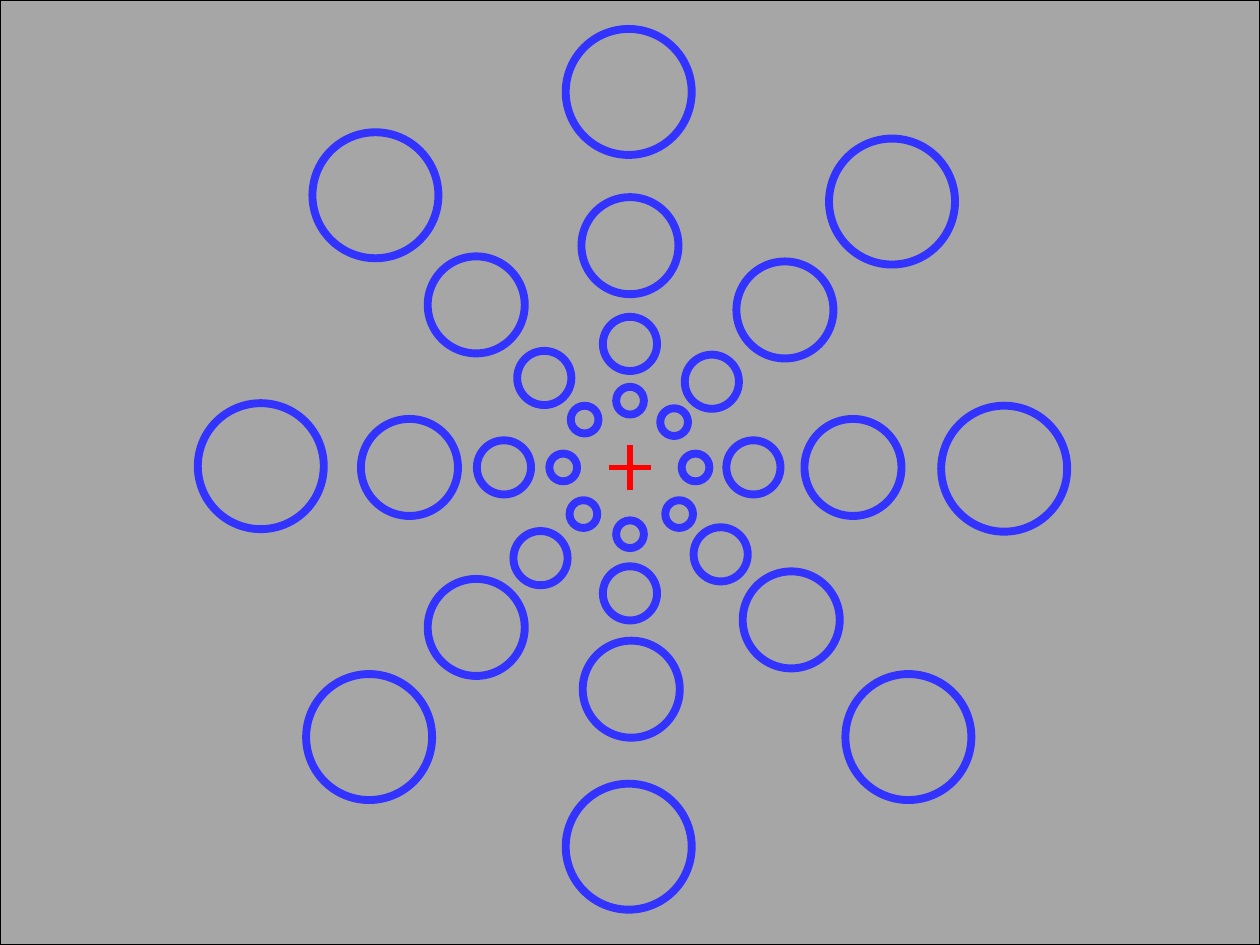
"""Build a slide of four rings of circles around a fixation cross."""
from lxml import etree
from pptx import Presentation
from pptx.dml.color import RGBColor
from pptx.enum.shapes import MSO_CONNECTOR, MSO_SHAPE
from pptx.oxml.ns import qn
from pptx.util import Inches, Pt

RECT, OVAL = MSO_SHAPE.RECTANGLE, MSO_SHAPE.OVAL
STRAIGHT = MSO_CONNECTOR.STRAIGHT

WIDTH, HEIGHT = 10, 7.5
CENTER = (5, 3.71)
CROSS_BOX = (4.83, 3.53, 0.34, 0.36)
GRAY, BLACK, BLUE, RED = "A6A6A6", "000000", "3333FF", "FF0000"

# Circle diameter: centre offsets from the cross, clockwise from the top.
RINGS = {
    1.0: [(-0.01, -2.98), (2.08, -2.11), (2.97, 0.01), (2.21, 2.14),
          (-0.01, 3.01), (-2.07, 2.14), (-2.93, -0.01), (-2.02, -2.16)],
    0.77: [(0, -1.76), (1.23, -1.25), (1.77, 0), (1.28, 1.21),
           (0.01, 1.76), (-1.22, 1.27), (-1.75, 0), (-1.22, -1.29)],
    0.43: [(0, -0.98), (0.65, -0.68), (0.98, 0), (0.72, 0.69),
           (0, 1), (-0.71, 0.72), (-1, 0), (-0.68, -0.71)],
    0.22: [(0, -0.53), (0.35, -0.36), (0.52, 0), (0.39, 0.37),
           (0, 0.53), (-0.37, 0.37), (-0.53, 0), (-0.36, -0.38)],
}


def color(value):
    """Return the colour for a hex string."""
    return RGBColor.from_string(value)


def set_line(sp, value, width):
    """Set the line colour and width of a shape or connector."""
    sp.line.color.rgb = color(value)
    sp.line.width = Pt(width)


def add_background(s, box):
    """Fill the box with an outlined gray rectangle."""
    sp = s.shapes.add_shape(RECT, *map(Inches, box))
    sp.shadow.inherit = False
    sp.fill.solid()
    sp.fill.fore_color.rgb = color(GRAY)
    set_line(sp, BLACK, 0.75)


def add_ring(s, center, diameter, offsets):
    """Place equal open circles at offsets from the centre."""
    for dx, dy in offsets:
        left = center[0] + dx - diameter / 2
        top = center[1] + dy - diameter / 2
        sp = s.shapes.add_shape(OVAL, *map(Inches, (left, top, diameter, diameter)))
        sp.shadow.inherit = False
        sp.fill.background()
        set_line(sp, BLUE, 4.5)


def add_cross(s, box):
    """Group a vertical and a horizontal line that cross in the box."""
    left, top, width, height = box
    x, y = left + width / 2, top + height / 2
    group = s.shapes.add_group_shape()
    for ends in ((x, top, x, top + height), (left, y, left + width, y)):
        sp = group.shapes.add_connector(STRAIGHT, *map(Inches, ends))
        set_line(sp, RED, 3)
        etree.SubElement(sp.element.spPr, qn("a:effectLst"))


def main():
    """Build and save the slide."""
    prs = Presentation()
    prs.slide_width, prs.slide_height = Inches(WIDTH), Inches(HEIGHT)
    s = prs.slides.add_slide(prs.slide_layouts[6])
    add_background(s, (0, 0, WIDTH, HEIGHT))
    for diameter, offsets in RINGS.items():
        add_ring(s, CENTER, diameter, offsets)
    add_cross(s, CROSS_BOX)
    prs.save("out.pptx")


if __name__ == "__main__":
    main()
